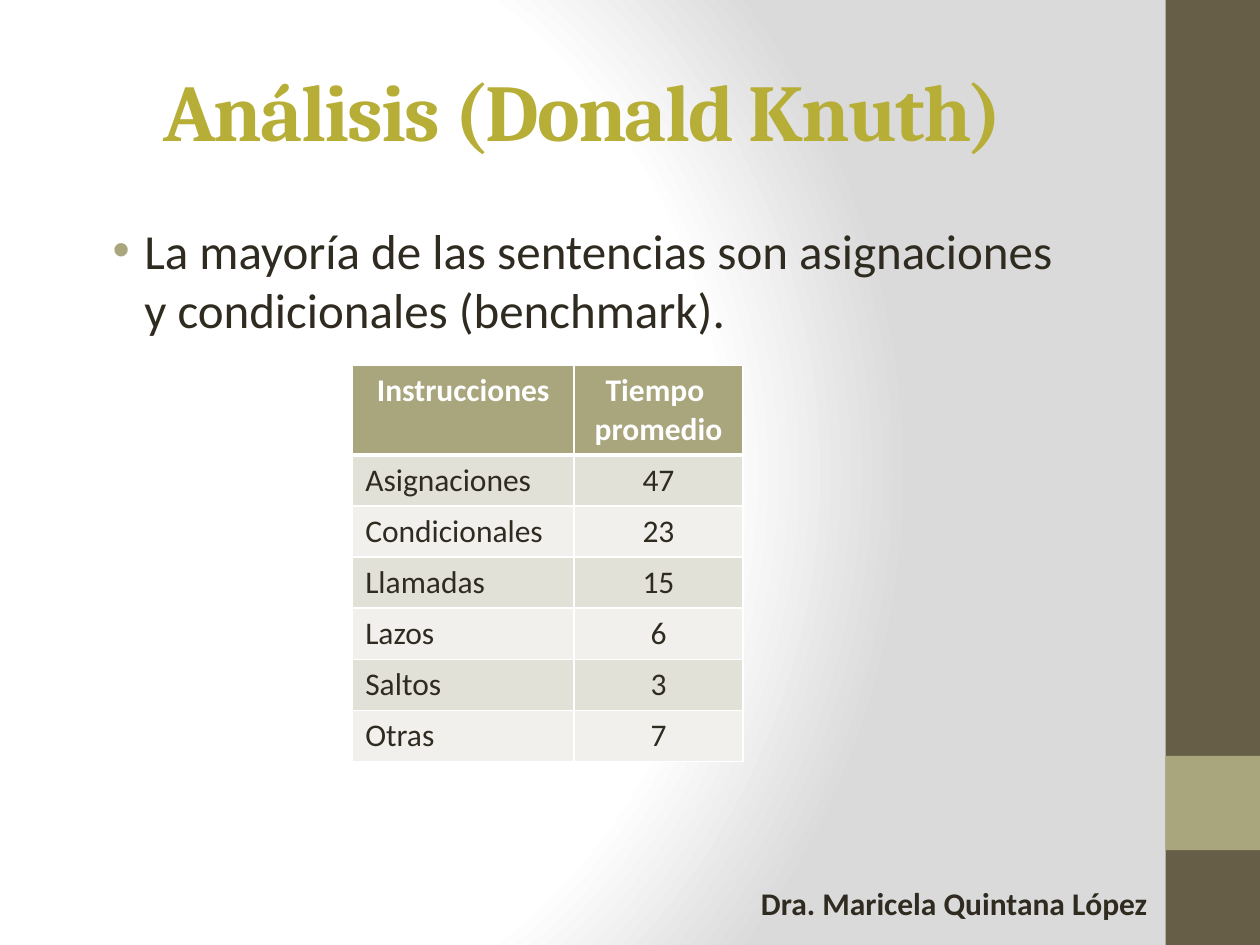
from lxml.etree import SubElement
from pptx import Presentation
from pptx.dml.color import RGBColor
from pptx.enum.shapes import MSO_SHAPE
from pptx.enum.text import MSO_ANCHOR, MSO_AUTO_SIZE, PP_ALIGN
from pptx.oxml import parse_xml
from pptx.oxml.ns import nsdecls, qn
from pptx.util import Cm, Pt

WHITE = RGBColor(0xFF, 0xFF, 0xFF)
GRAY = RGBColor(0xDA, 0xDA, 0xDA)
BROWN = RGBColor(0x67, 0x5E, 0x47)
SAGE = RGBColor(0xA9, 0xA5, 0x7C)
OLIVE = RGBColor(0xB7, 0xAE, 0x38)
INK = RGBColor(0x2F, 0x2B, 0x20)
BAND_DARK = RGBColor(0xE2, 0xE1, 0xD7)
BAND_LIGHT = RGBColor(0xF1, 0xF0, 0xEC)

TITLE_FONT = {"name": "Cambria", "size": Pt(46), "bold": True}
BODY_FONT = {"name": "Calibri", "size": Pt(28), "bold": False}
STRONG_FONT = {"name": "Calibri", "size": Pt(18), "bold": True}
CELL_FONT = {"name": "Calibri", "size": Pt(18), "bold": False}

INSTRUCTIONS = [
    ("Asignaciones", 47),
    ("Condicionales", 23),
    ("Llamadas", 15),
    ("Lazos", 6),
    ("Saltos", 3),
    ("Otras", 7),
]


def apply(target, values):
    for attribute, value in values.items():
        setattr(target, attribute, value)


def write(paragraph, text, font, color):
    run = paragraph.add_run()
    run.text = text
    apply(run.font, font)
    run.font.color.rgb = color
    return run


def add_frame(slide, box, settings):
    frame = slide.shapes.add_textbox(*map(Cm, box)).text_frame
    apply(frame, settings)
    return frame


def paint_background(slide):
    stops = "".join(
        f'<a:gs pos="{position}"><a:srgbClr val="{color}"/></a:gs>'
        for position, color in ((0, WHITE), (75000, WHITE), (100000, GRAY))
    )
    gradient = parse_xml(
        f'<a:gradFill {nsdecls("a")} rotWithShape="1"><a:gsLst>{stops}</a:gsLst>'
        '<a:path path="circle">'
        '<a:fillToRect l="20000" t="50000" r="100000" b="50000"/>'
        "</a:path></a:gradFill>"
    )
    slide.background.fill.solid()
    solid = slide.element.find(".//" + qn("p:bgPr")).find(qn("a:solidFill"))
    solid.getparent().replace(solid, gradient)


def add_sidebar(slide, box):
    left, top, width, height = box
    accent_top = top + height * 0.8
    for band_top, band_height, color in ((top, height, BROWN), (accent_top, width, SAGE)):
        band = slide.shapes.add_shape(
            MSO_SHAPE.RECTANGLE, Cm(left), Cm(band_top), Cm(width), Cm(band_height)
        )
        band.shadow.inherit = False
        band.fill.solid()
        band.fill.fore_color.rgb = color
        band.line.fill.background()


def add_author(slide, box):
    frame = add_frame(
        slide, box, {"word_wrap": False, "auto_size": MSO_AUTO_SIZE.SHAPE_TO_FIT_TEXT}
    )
    write(frame.paragraphs[0], "Dra. Maricela Quintana López", STRONG_FONT, INK)


def add_title(slide, box):
    frame = add_frame(
        slide, box, {"word_wrap": True, "vertical_anchor": MSO_ANCHOR.MIDDLE}
    )
    title = write(frame.paragraphs[0], "Análisis (Donald Knuth)", TITLE_FONT, OLIVE)
    title.font._element.set("spc", "-100")


def add_statement(slide, box):
    paragraph = add_frame(slide, box, {"word_wrap": True}).paragraphs[0]
    write(
        paragraph,
        "La mayoría de las sentencias son asignaciones y condicionales (benchmark).",
        BODY_FONT,
        INK,
    )
    properties = paragraph._p.get_or_add_pPr()
    properties.set("marL", str(Cm(0.96)))
    properties.set("indent", str(Cm(-0.64)))
    bullet_color = SubElement(properties, qn("a:buClr"))
    SubElement(bullet_color, qn("a:srgbClr"), val=str(SAGE))
    SubElement(properties, qn("a:buFont"), typeface="Arial")
    SubElement(properties, qn("a:buChar"), char="•")


def format_cell(cell, lines, align, font, color, fill, bottom_width):
    borders = {"lnL": 1, "lnR": 1, "lnT": 1, "lnB": bottom_width}
    properties = cell._tc.get_or_add_tcPr()
    for side, width in borders.items():
        line = SubElement(properties, qn(f"a:{side}"), w=str(Pt(width)))
        SubElement(SubElement(line, qn("a:solidFill")), qn("a:srgbClr"), val=str(WHITE))
    cell.fill.solid()
    cell.fill.fore_color.rgb = fill
    frame = cell.text_frame
    for number, text in enumerate(lines):
        paragraph = frame.add_paragraph() if number else frame.paragraphs[0]
        paragraph.alignment = align
        write(paragraph, text, font, color)


def add_times_table(slide, box):
    left, top, width, height = box
    header_height = 1.8
    row_height = (height - header_height) / len(INSTRUCTIONS)
    table = slide.shapes.add_table(
        len(INSTRUCTIONS) + 1, 2, Cm(left), Cm(top), Cm(width), Cm(height)
    ).table
    name_width = 4.46
    table.columns[0].width = Cm(name_width)
    table.columns[1].width = Cm(width - name_width)
    for number, row in enumerate(table.rows):
        row.height = Cm(row_height if number else header_height)

    for column, lines in enumerate((["Instrucciones"], ["Tiempo ", "promedio"])):
        format_cell(
            table.cell(0, column), lines, PP_ALIGN.CENTER, STRONG_FONT, WHITE, SAGE, 3
        )
    for number, (instruction, time) in enumerate(INSTRUCTIONS, 1):
        fill = BAND_DARK if number % 2 else BAND_LIGHT
        for column, (text, align) in enumerate(
            ((instruction, PP_ALIGN.LEFT), (str(time), PP_ALIGN.CENTER))
        ):
            format_cell(
                table.cell(number, column), [text], align, CELL_FONT, INK, fill, 1
            )


def main():
    presentation = Presentation()
    apply(presentation, {"slide_width": Cm(25.4), "slide_height": Cm(19.05)})
    slide = presentation.slides.add_slide(presentation.slide_layouts[6])
    paint_background(slide)
    add_sidebar(slide, (23.5, 0, 1.9, 19.05))
    add_author(slide, (15.09, 17.7, 8.51, 1.02))
    add_title(slide, (3.05, 0.53, 19.35, 3.35))
    add_statement(slide, (1.7, 4.32, 20.22, 12.9))
    add_times_table(slide, (7.11, 7.37, 7.87, 7.98))
    presentation.save("out.pptx")


if __name__ == "__main__":
    main()
